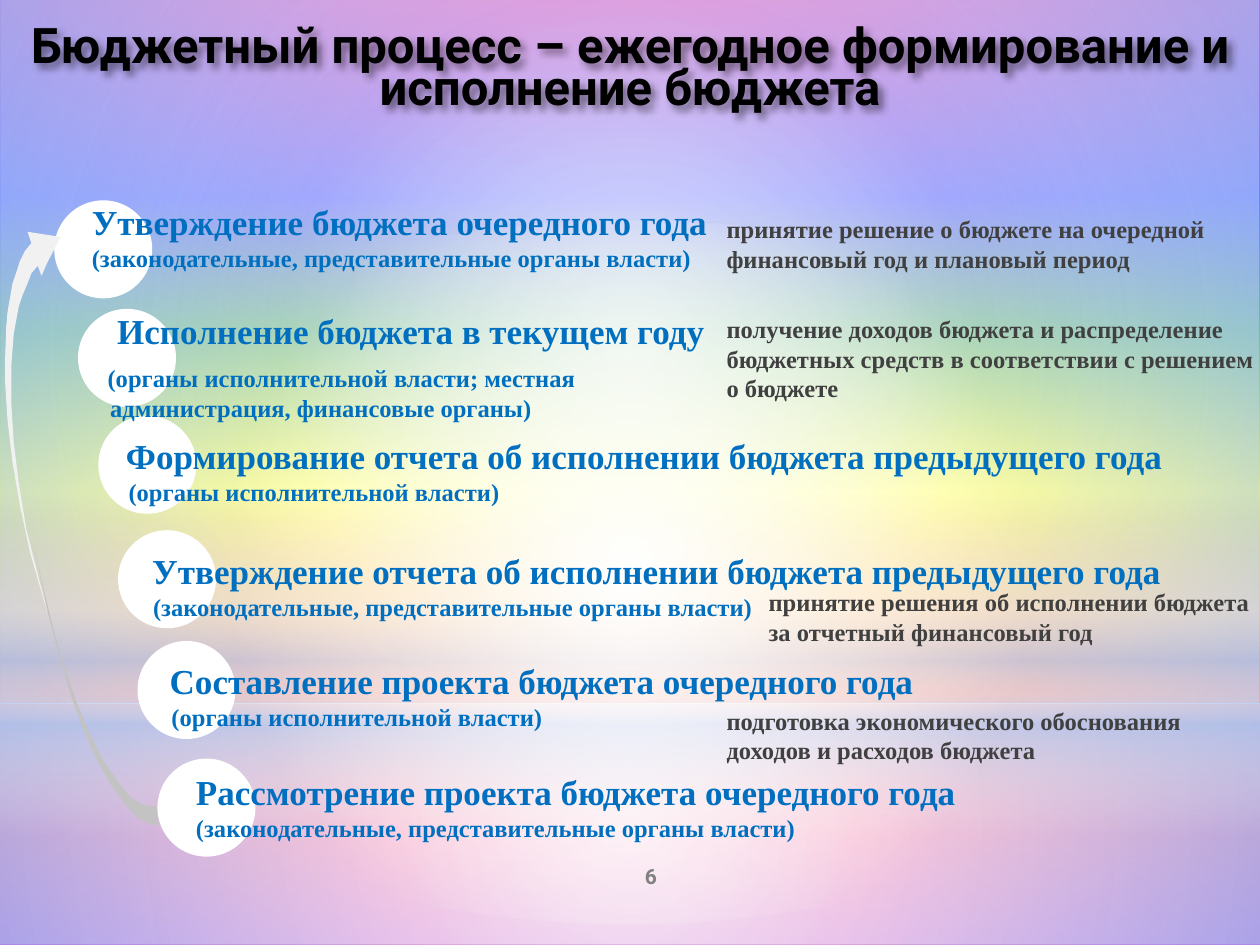
"""Build a slide on the yearly budget process: six steps, notes and a return arrow."""
from typing import NamedTuple, Optional

from lxml import etree
from pptx import Presentation
from pptx import util as u
from pptx.dml.color import RGBColor
from pptx.enum import shapes, text
from pptx.oxml.ns import qn

SERIF, SANS = "Times New Roman", "Roboto"
BLUE, GREY, WHITE = "006FC0", "404040", "FFFFFF"
CIRCLE = 56


class Box(NamedTuple):
    left: float
    top: float
    width: float
    height: float


class Stop(NamedTuple):
    pos: int
    color: str
    alpha: int = 100


class Layer(NamedTuple):
    kind: shapes.MSO_SHAPE
    box: Box
    stops: list[Stop]
    angle: Optional[int] = None


class Line(NamedTuple):
    text: str
    indent: float
    before: float = 0


class Step(NamedTuple):
    left: float
    top: float
    title: Line
    actors: list[Line]


class Note(NamedTuple):
    box: Box
    lines: list[str]


RAINBOW = [Stop(0, "A603AB"), Stop(21, "0819FB"), Stop(35, "1A8D48"), Stop(52, "FFFF00"),
           Stop(73, "EE3F17"), Stop(88, "E81766"), Stop(100, "A603AB")]
RECT, OVAL = shapes.MSO_SHAPE.RECTANGLE, shapes.MSO_SHAPE.OVAL
LAYERS = [
    Layer(RECT, Box(0, 401.8, 720, 138.2),
          [Stop(0, WHITE, 91), Stop(37, WHITE, 76), Stop(100, "ACCBF9", 79)]),
    Layer(RECT, Box(0, 0, 720, 401.8),
          [Stop(0, WHITE, 89), Stop(48, WHITE, 62), Stop(100, "ACCBF9", 79)]),
    Layer(RECT, Box(0, 296.6, 720, 180),
          [Stop(0, WHITE, 0), Stop(29, WHITE, 30), Stop(45, "ACCBF9", 40),
           Stop(55, WHITE, 26), Stop(65, "ACCBF9", 60), Stop(100, WHITE, 0)], 90),
    Layer(OVAL, Box(0, 126, 720, 401.8), [Stop(0, WHITE), Stop(56, WHITE, 0)]),
]
LEGISLATIVE = "(законодательные, представительные органы власти)"
EXECUTIVE = "(органы исполнительной власти)"
STEPS = [
    Step(31, 114.5, Line("Утверждение бюджета очередного года", 21.5), [Line(LEGISLATIVE, 21.5)]),
    Step(44.6, 176.5, Line("Исполнение бюджета в текущем году", 36, 21.3),
         [Line("(органы исполнительной власти; местная", 30.5, 6.3),
          Line("администрация, финансовые органы)", 32, 0.4)]),
    Step(56.2, 237.6, Line("Формирование отчета об исполнении бюджета предыдущего года", 41, 6.7),
         [Line(EXECUTIVE, 42.5)]),
    Step(67.5, 303, Line("Утверждение отчета об исполнении бюджета предыдущего года", 56, 24.7),
         [Line(LEGISLATIVE, 56.5)]),
    Step(78.6, 366.3, Line("Составление проекта бюджета очередного года", 66, 21.9),
         [Line(EXECUTIVE, 67)]),
    Step(90, 433.5, Line("Рассмотрение проекта бюджета очередного года", 81, 22.4),
         [Line(LEGISLATIVE, 81)]),
]
NOTES = [
    Note(Box(415.2, 119.5, 300.2, 39.6),
         ["принятие решение о бюджете на очередной финансовый год и плановый период"]),
    Note(Box(415.2, 185, 302.4, 39.6),
         ["получение доходов бюджета и распределение бюджетных средств в соответствии с решением",
          "о бюджете"]),
    Note(Box(439.2, 332.6, 278, 39.6),
         ["принятие решения об исполнении бюджета за отчетный финансовый год"]),
    Note(Box(415.2, 394.6, 307.4, 51),
         ["подготовка экономического обоснования доходов и расходов бюджета"]),
]
ARROW_HEAD = [
    (15.8, 132.5), (18, 139), (14.4, 143.3), (11.5, 149), (9.4, 155.5), (7.2, 162), (5.8, 170),
    (4.3, 178.6), (3.6, 187.2), (2.9, 206.6), (2.9, 217.4), (4.3, 239.8), (7.2, 264.2),
    (11.5, 289.4), (17.3, 316), (28.8, 355.7), (21.6, 328.3), (15.1, 302.4), (10.8, 276.5),
    (7.9, 252.7), (6.5, 230.4), (6.5, 209.5), (7.9, 190.8), (10.8, 175), (13, 168.5),
    (15.8, 162), (18, 156.2), (21.6, 151.9), (23.8, 157.7), (26.6, 151.2), (34.6, 135.4)]
ARROW_TAIL = [
    (19.4, 311.8), (22.3, 325.4), (27.4, 350.6), (33.8, 374.4), (40.3, 396.7), (47.5, 416.9),
    (55.4, 434.2), (63.4, 448.6), (71.3, 459.4), (78.5, 467.3), (85.7, 470.9), (90.7, 471.6),
    (89.3, 460.8), (82.1, 460.1), (74.9, 455.8), (67.7, 447.1), (59.8, 435.6), (51.8, 420.5),
    (44.6, 403.2), (37.4, 383), (31, 361.4), (25.2, 337.7)]


def rgb(color: str) -> RGBColor:
    return RGBColor.from_string(color)


def add_color(parent, color: str, alpha: int) -> None:
    clr = etree.SubElement(parent, qn("a:srgbClr"), val=color)
    if alpha < 100:
        etree.SubElement(clr, qn("a:alpha"), val=str(alpha * 1000))


def set_gradient(fill, holder, stops: list[Stop], angle: Optional[int]) -> None:
    fill.gradient()
    grad = next(holder.iter(qn("a:gradFill")))
    for child in list(grad):
        grad.remove(child)
    gs_list = etree.SubElement(grad, qn("a:gsLst"))
    for stop in stops:
        gs = etree.SubElement(gs_list, qn("a:gs"), pos=str(stop.pos * 1000))
        add_color(gs, stop.color, stop.alpha)
    if angle is None:
        route = etree.SubElement(grad, qn("a:path"), {"path": "circle"})
        etree.SubElement(route, qn("a:fillToRect"), dict.fromkeys("ltrb", "50000"))
    else:
        etree.SubElement(grad, qn("a:lin"), ang=str(angle * 60000), scaled="0")


def add_preset(s, kind: shapes.MSO_SHAPE, box: Box):
    sp = s.shapes.add_shape(kind, *map(u.Pt, box))
    sp.shadow.inherit = False
    sp.line.fill.background()
    return sp


def fill_solid(sp, color: str) -> None:
    sp.fill.solid()
    sp.fill.fore_color.rgb = rgb(color)


def add_outline(s, points: list[tuple[float, float]], color: str) -> None:
    start, *rest = [(u.Pt(x), u.Pt(y)) for x, y in points]
    builder = s.shapes.build_freeform(*start)
    builder.add_line_segments(rest)
    sp = builder.convert_to_shape()
    sp.shadow.inherit = False
    sp.line.fill.background()
    fill_solid(sp, color)


def add_text(s, box: Box, anchor=text.MSO_ANCHOR.TOP, inset: Optional[float] = 0):
    sp = s.shapes.add_textbox(*map(u.Pt, box))
    tf = sp.text_frame
    tf.word_wrap, tf.vertical_anchor = True, anchor
    if inset is not None:
        tf.margin_left = tf.margin_top = tf.margin_right = tf.margin_bottom = u.Pt(inset)
    return sp


def write(tf, line: Line, size: float, color: str, font: str = SERIF,
          spacing: Optional[float] = None, align=text.PP_ALIGN.LEFT) -> None:
    p = tf.paragraphs[0] if not tf.text else tf.add_paragraph()
    p.text, p.alignment, p.space_before = line.text, align, u.Pt(line.before)
    if spacing:
        p.line_spacing = u.Pt(spacing)
    p.font.name, p.font.size, p.font.bold = font, u.Pt(size), True
    p.font.color.rgb = rgb(color)
    pPr = p._p.get_or_add_pPr()
    pPr.set("marL", str(u.Pt(line.indent)))
    pPr.set("indent", "0")


def add_shadow(sp) -> None:
    effects = etree.SubElement(sp._element.spPr, qn("a:effectLst"))
    shadow = etree.SubElement(effects, qn("a:outerShdw"), blurRad=str(u.Pt(4)),
                              dist=str(u.Pt(3)), dir="2700000", algn="tl")
    add_color(shadow, "000000", 45)


def main() -> None:
    prs = Presentation()
    prs.slide_width, prs.slide_height = u.Pt(720), u.Pt(540)
    s = prs.slides.add_slide(prs.slide_layouts[6])
    set_gradient(s.background.fill, s._element, RAINBOW, 90)
    for layer in LAYERS:
        sp = add_preset(s, layer.kind, layer.box)
        set_gradient(sp.fill, sp._element, layer.stops, layer.angle)
    for step in STEPS:
        fill_solid(add_preset(s, OVAL, Box(step.left, step.top, CIRCLE, CIRCLE)), WHITE)
    tf = add_text(s, Box(31, 114.5, 669.6, 388)).text_frame
    for step in STEPS:
        write(tf, step.title, 20, BLUE, spacing=24)
        for actor in step.actors:
            write(tf, actor, 14, BLUE, spacing=17)
    add_outline(s, ARROW_HEAD, "F1F1F1")
    add_outline(s, ARROW_TAIL, "C3C3C3")
    for note in NOTES:
        tf = add_text(s, note.box, text.MSO_ANCHOR.MIDDLE).text_frame
        for content in note.lines:
            write(tf, Line(content, 0), 14, GREY, spacing=16.8)
    title = add_text(s, Box(0, 14.4, 720, 73.4), inset=None)
    write(title.text_frame, Line("Бюджетный процесс – ежегодное формирование и исполнение бюджета", 0),
          28, "000000", SANS, 24, text.PP_ALIGN.CENTER)
    add_shadow(title)
    number = add_text(s, Box(300, 486, 144, 28.8), text.MSO_ANCHOR.MIDDLE, None)
    write(number.text_frame, Line("6", 0), 12, "808080", SANS, align=text.PP_ALIGN.CENTER)
    prs.save("out.pptx")


if __name__ == "__main__":
    main()
